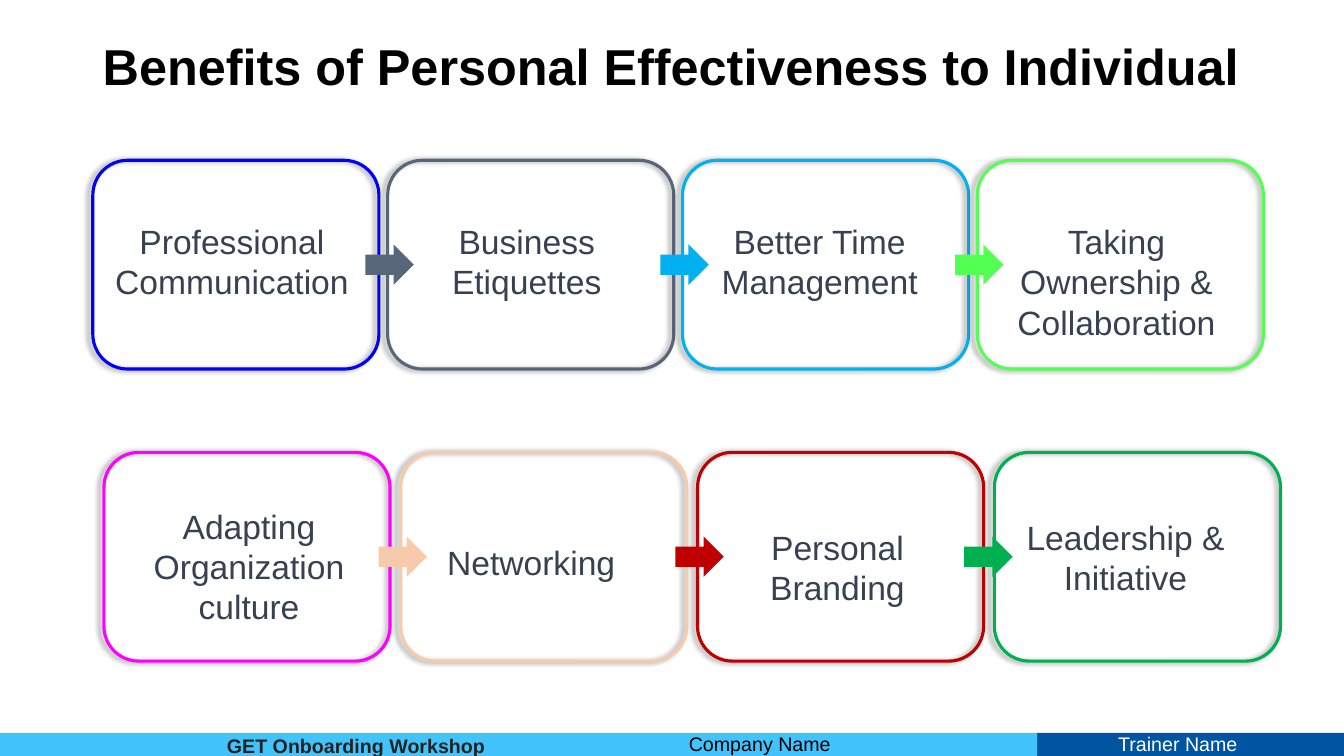
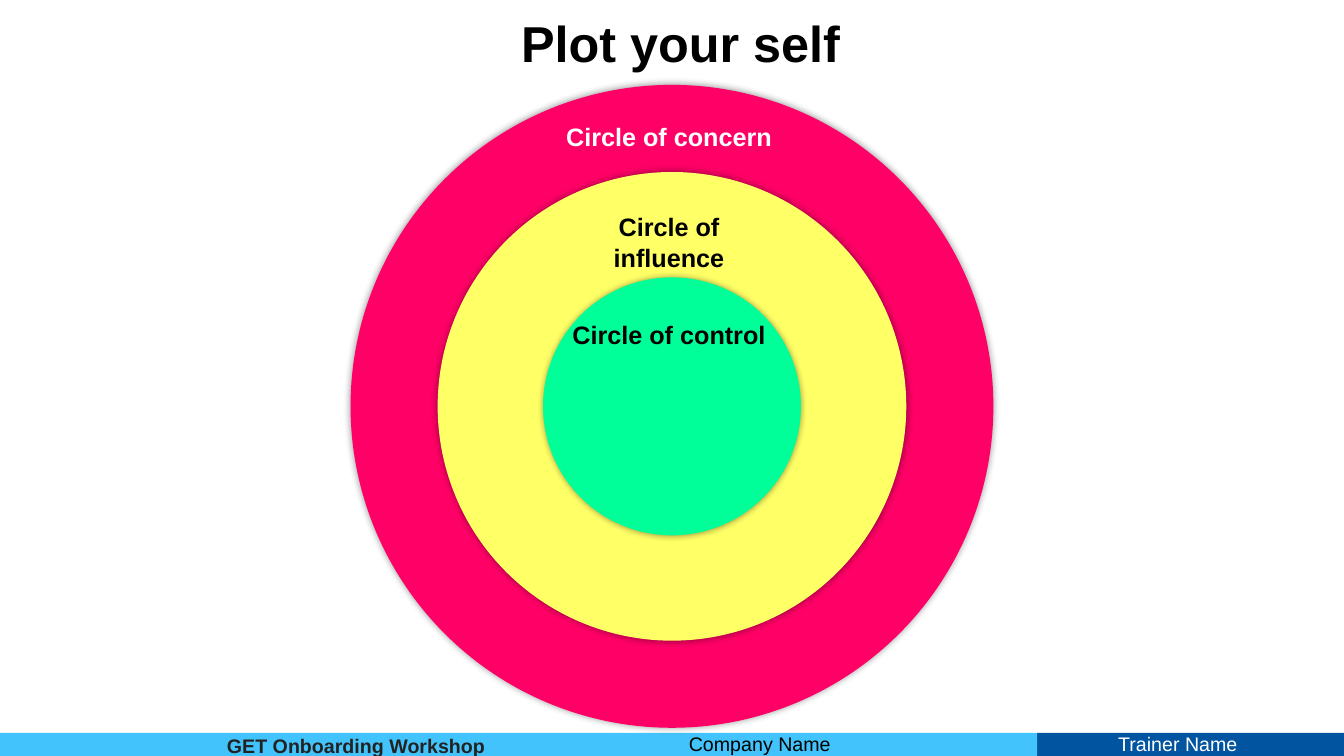
from dataclasses import dataclass

from lxml import etree
from pptx import Presentation
from pptx.dml.color import RGBColor
from pptx.enum import shapes, text
from pptx.oxml import ns
from pptx.util import Cm, Pt

FONT = "Arial"
BLACK = RGBColor(0x00, 0x00, 0x00)
WHITE = RGBColor(0xFF, 0xFF, 0xFF)
INK = RGBColor(0x22, 0x22, 0x22)
SLATE = RGBColor(0x37, 0x41, 0x51)
SKY = RGBColor(0x42, 0xC3, 0xFB)
NAVY = RGBColor(0x01, 0x54, 0x9F)
BLUE = RGBColor(0x00, 0x00, 0xFF)
GRAY = RGBColor(0x58, 0x66, 0x7A)
CYAN = RGBColor(0x00, 0xB0, 0xF0)
LIME = RGBColor(0x53, 0xFF, 0x53)
MAGENTA = RGBColor(0xFF, 0x00, 0xFF)
PEACH = RGBColor(0xF7, 0xCA, 0xAC)
RED = RGBColor(0xC0, 0x00, 0x00)
GREEN = RGBColor(0x00, 0xB0, 0x50)
PINK = RGBColor(0xFF, 0x00, 0x66)
YELLOW = RGBColor(0xFF, 0xFF, 0x66)
MINT = RGBColor(0x00, 0xFF, 0x99)

PAGE_WIDTH, PAGE_HEIGHT = 33.87, 19.05
BAND_TOP, BAND_SPLIT = 18.47, 26.14
CARD_WIDTH, CARD_HEIGHT = 7.21, 5.26
ARROW_WIDTH, ARROW_HEIGHT = 1.22, 1.02
RINGS_MIDDLE = 10.24


@dataclass(frozen=True)
class Shadow:
    blur: float
    distance: float
    degrees: int


@dataclass(frozen=True)
class FooterLabel:
    words: str
    left: float
    top: float
    color: RGBColor
    bold: bool = False


@dataclass(frozen=True)
class Step:
    """A card; label offsets count from its corner, arrow_shift from its left side."""
    words: str
    color: RGBColor
    label_left: float = 0
    label_top: float = 1.4
    arrow_shift: float = -0.56


@dataclass(frozen=True)
class StepRow:
    left: float
    top: float
    pitch: float
    steps: tuple[Step, ...]


@dataclass(frozen=True)
class Ring:
    words: str
    diameter: float
    fill: RGBColor
    label_top: float
    color: RGBColor = BLACK


CARD_SHADOW = Shadow(4, 3, 180)
RING_SHADOW = Shadow(5, 0, 0)

FOOTER_LABELS = (
    FooterLabel("Company Name", 17.11, 18.31, BLACK),
    FooterLabel("Trainer Name", 27.93, 18.32, WHITE),
    FooterLabel("GET Onboarding Workshop", 5.47, 18.36, INK, bold=True),
)

STEP_ROWS = (
    StepRow(2.34, 4.04, 7.43, (
        Step("Professional Communication", BLUE),
        Step("Business\nEtiquettes", GRAY),
        Step("Better Time\nManagement", CYAN, label_left=-0.05),
        Step("Taking Ownership & Collaboration", LIME),
    )),
    StepRow(2.62, 11.4, 7.48, (
        Step("Adapting Organization culture", MAGENTA, 0.15, 1.22),
        Step("Networking", PEACH, -0.22, 2.13),
        Step("Personal\nBranding", RED, 0.02, 1.75),
        Step("Leadership & Initiative", GREEN, -0.2, 1.5, arrow_shift=-0.76),
    )),
)

RINGS = (
    Ring("Circle of concern", 16.2, PINK, 2.92, WHITE),
    Ring("Circle of influence", 11.81, YELLOW, 5.21),
    Ring("Circle of control", 6.5, MINT, 7.92),
)


def add_text(page, words: str, left: float, top: float, width: float, height: float, *,
             size: float, color: RGBColor, bold: bool = False,
             align=text.PP_ALIGN.LEFT, anchor=text.MSO_ANCHOR.TOP,
             line_spacing: float = 1.0) -> None:
    """Add a wrapped text box; each line of words is a paragraph."""
    box = page.shapes.add_textbox(Cm(left), Cm(top), Cm(width), Cm(height))
    frame = box.text_frame
    frame.word_wrap = True
    frame.vertical_anchor = anchor
    frame.text = words
    for para in frame.paragraphs:
        para.alignment = align
        para.line_spacing = line_spacing
        para.font.name = FONT
        para.font.size = Pt(size)
        para.font.bold = bold
        para.font.color.rgb = color


def add_figure(page, kind, left: float, top: float, width: float, height: float, *,
               fill: RGBColor | None = None, line: RGBColor | None = None,
               shadow: Shadow | None = None) -> None:
    figure = page.shapes.add_shape(kind, Cm(left), Cm(top), Cm(width), Cm(height))
    if fill is None:
        figure.fill.background()
    else:
        figure.fill.solid()
        figure.fill.fore_color.rgb = fill
    if line is None:
        figure.line.fill.background()
    else:
        figure.line.color.rgb = line
        figure.line.width = Pt(2.25)
    figure.shadow.inherit = False
    if shadow:
        cast_shadow(figure, shadow)


def cast_shadow(figure, shadow: Shadow) -> None:
    effects = figure._element.spPr.find(ns.qn("a:effectLst"))
    outer = etree.SubElement(
        effects, ns.qn("a:outerShdw"), blurRad=str(Pt(shadow.blur)),
        dist=str(Pt(shadow.distance)), dir=str(shadow.degrees * 60000),
        algn="ctr", rotWithShape="0")
    tint = etree.SubElement(outer, ns.qn("a:srgbClr"), val=str(BLACK))
    etree.SubElement(tint, ns.qn("a:alpha"), val="40000")


def add_title(page, words: str, left: float, top: float, width: float, height: float,
              align=text.PP_ALIGN.LEFT) -> None:
    add_text(page, words, left, top, width, height, size=36, color=BLACK, bold=True,
             align=align, anchor=text.MSO_ANCHOR.MIDDLE, line_spacing=0.9)


def add_page(deck):
    """Add a blank page with the shared footer."""
    page = deck.slides.add_slide(deck.slide_layouts[6])
    for left, right, color in ((BAND_SPLIT, PAGE_WIDTH, NAVY), (0, BAND_SPLIT, SKY)):
        add_figure(page, shapes.MSO_SHAPE.RECTANGLE, left, BAND_TOP,
                   right - left, PAGE_HEIGHT - BAND_TOP, fill=color)
    for label in FOOTER_LABELS:
        add_text(page, label.words, label.left, label.top, 8 if label.bold else 5.9, 0.86,
                 size=14, color=label.color, bold=label.bold)
    return page


def draw_step_row(page, row: StepRow) -> None:
    placed = [(row.left + index * row.pitch, step) for index, step in enumerate(row.steps)]
    for left, step in placed:
        add_figure(page, shapes.MSO_SHAPE.ROUNDED_RECTANGLE, left, row.top,
                   CARD_WIDTH, CARD_HEIGHT, line=step.color, shadow=CARD_SHADOW)
        add_text(page, step.words, left + step.label_left, row.top + step.label_top,
                 7.01, 2.31, size=24, color=SLATE, align=text.PP_ALIGN.CENTER)
    arrow_top = row.top + (CARD_HEIGHT - ARROW_HEIGHT) / 2
    for left, step in placed[1:]:
        add_figure(page, shapes.MSO_SHAPE.RIGHT_ARROW, left + step.arrow_shift, arrow_top,
                   ARROW_WIDTH, ARROW_HEIGHT, fill=step.color)


def build_benefits(deck) -> None:
    page = add_page(deck)
    add_title(page, "Benefits of Personal Effectiveness to Individual",
              2.34, 0.76, 29.3, 1.96)
    for row in STEP_ROWS:
        draw_step_row(page, row)


def build_circles(deck) -> None:
    page = add_page(deck)
    add_title(page, "Plot your self", 10.64, 0.31, 13.03, 1.7, text.PP_ALIGN.CENTER)
    for ring in RINGS:
        add_figure(page, shapes.MSO_SHAPE.OVAL, (PAGE_WIDTH - ring.diameter) / 2,
                   RINGS_MIDDLE - ring.diameter / 2, ring.diameter, ring.diameter,
                   fill=ring.fill, shadow=RING_SHADOW)
    for ring in RINGS:
        add_text(page, ring.words, 13.89, ring.label_top, 5.94, 1.02, size=18,
                 color=ring.color, bold=True, align=text.PP_ALIGN.CENTER)


def main() -> None:
    deck = Presentation()
    deck.slide_width, deck.slide_height = Cm(PAGE_WIDTH), Cm(PAGE_HEIGHT)
    build_benefits(deck)
    build_circles(deck)
    deck.save("out.pptx")


if __name__ == "__main__":
    main()
